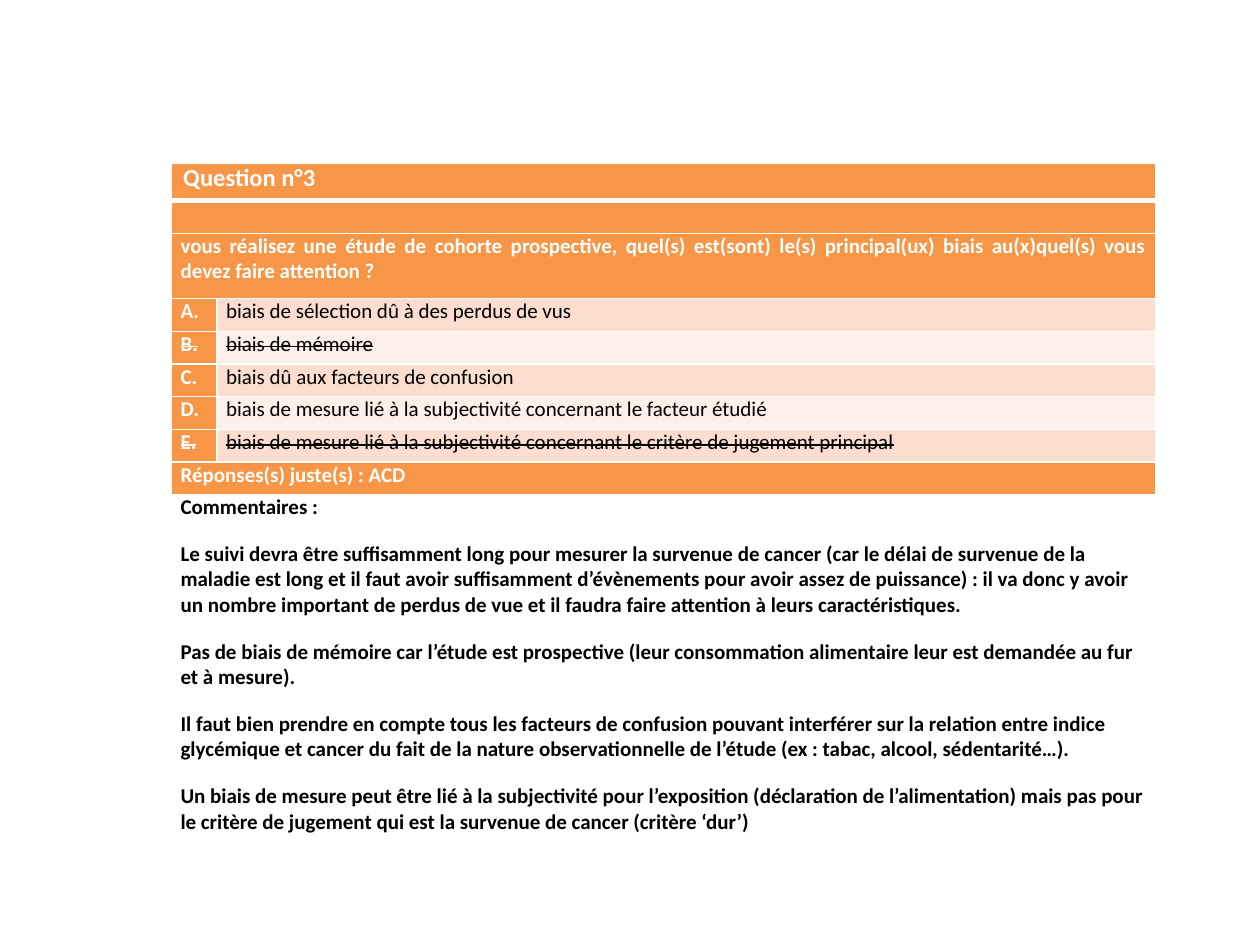
from lxml import etree
from pptx import Presentation
from pptx.dml.color import RGBColor
from pptx.enum import text
from pptx.oxml import ns
from pptx.util import Pt

# Content
TITLE = "Question n°3"
QUESTION = ("vous réalisez une étude de cohorte prospective, quel(s) est(sont) le(s) "
            "principal(ux) biais au(x)quel(s) vous devez faire attention\u00a0?")
ANSWERS = [  # letter, wording, struck out
    ("A.", "biais de sélection dû à des perdus de vus", False),
    ("B.", "biais de mémoire", True),
    ("C.", "biais dû aux facteurs de confusion", False),
    ("D.", "biais de mesure lié à la subjectivité concernant le facteur étudié", False),
    ("E.", "biais de mesure lié à la subjectivité concernant le critère de jugement principal", True),
]
SOLUTION = "Réponses(s) juste(s)\u00a0: ACD"
COMMENTS = [
    "Commentaires\u00a0:",
    "Le suivi devra être suffisamment long pour mesurer la survenue de cancer (car le délai "
    "de survenue de la maladie est long et il faut avoir suffisamment d’évènements pour avoir "
    "assez de puissance) : il va donc y avoir un nombre important de perdus de vue et il faudra "
    "faire attention à leurs caractéristiques.",
    "Pas de biais de mémoire car l’étude est prospective (leur consommation alimentaire leur "
    "est demandée au fur et à mesure).",
    "Il faut bien prendre en compte tous les facteurs de confusion pouvant interférer sur la "
    "relation entre indice glycémique et cancer du fait de la nature observationnelle de "
    "l’étude (ex : tabac, alcool, sédentarité…).",
    "Un biais de mesure peut être lié à la subjectivité pour l’exposition (déclaration de "
    "l’alimentation) mais pas pour le critère de jugement qui est la survenue de cancer "
    "(critère ‘dur’)",
]

# Style and sizes in points
FONT = "Calibri"
ORANGE, WHITE, BLACK = "F79646", "FFFFFF", "000000"
BANDS = ["FCDDCF", "FDEFE9"]
LEFT, TOP = 98, 93
COLUMNS = [26, 536.5]
ROW = 18.7
ROWS = [21.6, ROW, 37.4] + [ROW] * (len(ANSWERS) + 1) + [252]
MARGIN = 5.2
JUSTIFY = text.PP_ALIGN.JUSTIFY


def color(value):
    return RGBColor.from_string(value)


def set_border(cell, side, width):
    line = etree.SubElement(cell._tc.get_or_add_tcPr(), ns.qn(f"a:ln{side}"), w=str(Pt(width)))
    fill = etree.SubElement(line, ns.qn("a:solidFill"))
    etree.SubElement(fill, ns.qn("a:srgbClr"), val=WHITE)


def fill_cell(cell, paragraphs, fill=ORANGE, font_color=WHITE, size=12, bold=True,
              strike=False, align=None, margin=MARGIN, bottom=1, top=1):
    for side, width in (("L", 1), ("R", 1), ("T", top), ("B", bottom)):
        set_border(cell, side, width)
    if fill:
        cell.fill.solid()
        cell.fill.fore_color.rgb = color(fill)
    else:
        cell.fill.background()
    cell.margin_left, cell.margin_right = Pt(margin), Pt(MARGIN)
    cell.margin_top = cell.margin_bottom = 0
    cell.text_frame.text = "\n".join(paragraphs)
    for index, paragraph in enumerate(cell.text_frame.paragraphs):
        paragraph.alignment = align
        if index:
            paragraph.space_before = Pt(12)
        for run in paragraph.runs:
            run.font.name, run.font.size, run.font.bold = FONT, Pt(size), bold
            run.font.color.rgb = color(font_color)
            if strike:
                run.font._element.set("strike", "sngStrike")
        if not paragraph.runs:  # an empty row keeps the text height
            etree.SubElement(paragraph._p, ns.qn("a:endParaRPr"), sz=str(size * 100))


presentation = Presentation()
presentation.slide_width, presentation.slide_height = Pt(720), Pt(540)
slide = presentation.slides.add_slide(presentation.slide_layouts[6])

# Table grid
table = slide.shapes.add_table(len(ROWS), len(COLUMNS), Pt(LEFT), Pt(TOP),
                               Pt(sum(COLUMNS)), Pt(sum(ROWS))).table
for column, width in zip(table.columns, COLUMNS):
    column.width = Pt(width)
for row, height in zip(table.rows, ROWS):
    row.height = Pt(height)

# Full-width rows
first_answer = 3
solution_row = first_answer + len(ANSWERS)
full_rows = {
    0: dict(paragraphs=[TITLE], size=14, align=JUSTIFY, margin=MARGIN + 1.5, bottom=3),
    1: dict(paragraphs=[], top=3),
    2: dict(paragraphs=[QUESTION], align=JUSTIFY),
    solution_row: dict(paragraphs=[SOLUTION]),
    solution_row + 1: dict(paragraphs=COMMENTS, fill=None, font_color=BLACK),
}
for row, options in full_rows.items():
    table.cell(row, 0).merge(table.cell(row, 1))
    fill_cell(table.cell(row, 0), **options)

# Answer rows
for index, (letter, wording, struck) in enumerate(ANSWERS):
    row = first_answer + index
    fill_cell(table.cell(row, 0), [letter], strike=struck)
    fill_cell(table.cell(row, 1), [wording], fill=BANDS[index % 2], font_color=BLACK,
              bold=False, strike=struck)

presentation.save("out.pptx")
